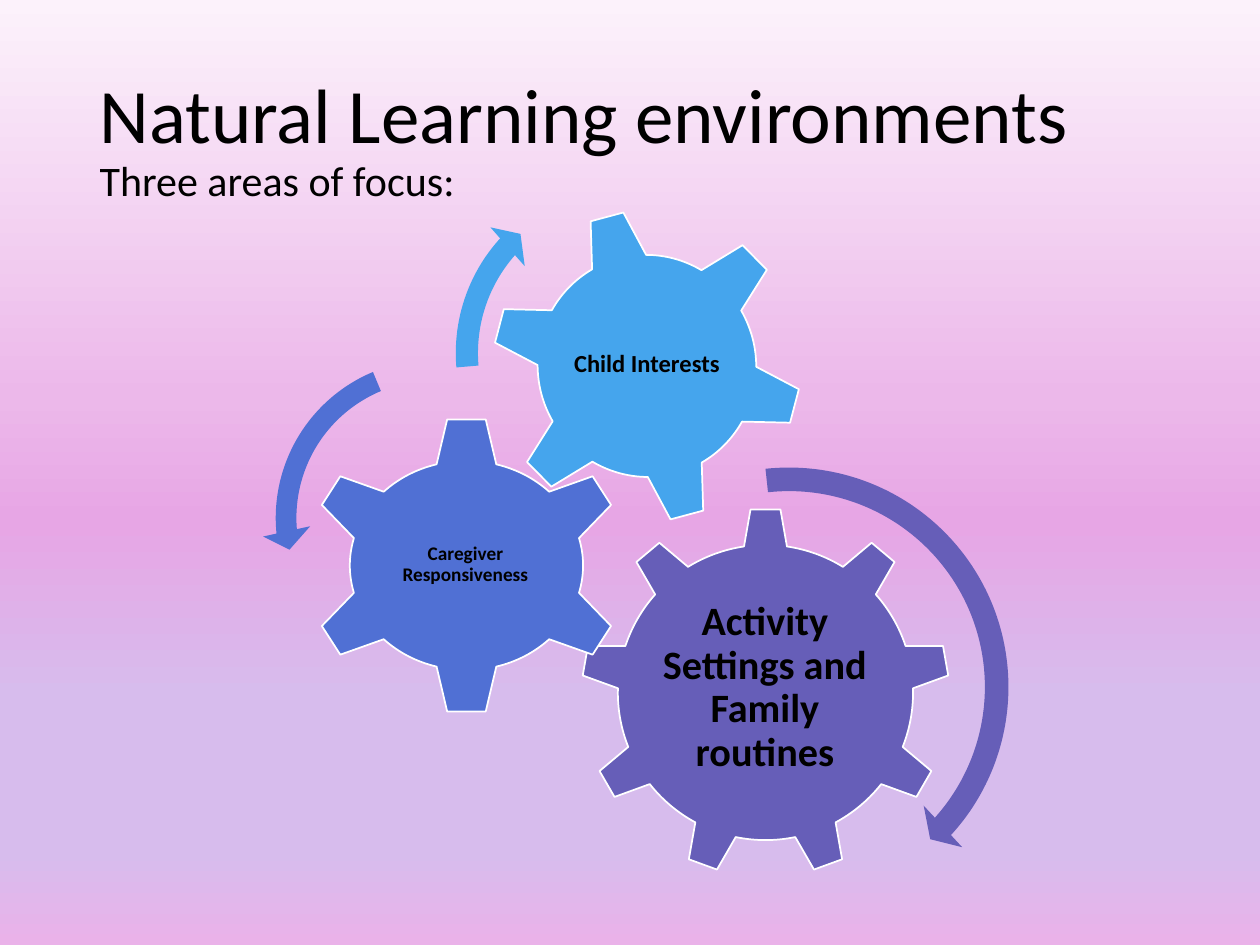
from lxml.etree import SubElement
from pptx import Presentation
from pptx.dml.color import RGBColor
from pptx.enum.shapes import MSO_SHAPE as Shape
from pptx.enum.text import MSO_ANCHOR as Anchor, MSO_AUTO_SIZE as AutoSize, PP_ALIGN as Align
from pptx.oxml.ns import qn
from pptx.util import Pt

EMU_PER_PX = 914400 / 126
FONT = "Calibri"
BLACK = RGBColor(0x00, 0x00, 0x00)
WHITE = RGBColor(0xFF, 0xFF, 0xFF)
PURPLE = RGBColor(0x66, 0x5E, 0xB8)
BLUE = RGBColor(0x50, 0x70, 0xD4)
SKY = RGBColor(0x45, 0xA5, 0xED)

# Background stops: percent from the top, colour
STOPS = [(0, "FCF2FB"), (42, "ECB8EA"), (55, "E7A6E5"),
         (74, "D7BCED"), (90, "D7BCED"), (100, "EAB2E9")]

# Gears: shape, place, rotation, colour, label, label place, inset, text size
GEARS = [
    (Shape.GEAR_9, (581, 508, 369, 369), 0, PURPLE,
     "Activity Settings and Family routines", (655, 593, 220, 190), 4, 23),
    (Shape.GEAR_6, (305, 416, 323, 299), 0, BLUE,
     "Caregiver Responsiveness", (383, 491, 165, 147), 3, 11),
    (Shape.GEAR_6, (491, 208, 312, 316), 345, SKY,
     "Child Interests", (559, 277, 176, 176), 3, 14),
]

# Arrows: shape, place, colour, adjustments
ARROWS = [
    (Shape.CIRCULAR_ARROW, (553, 451, 472, 472), PURPLE,
     (0.05, 2.99, 25.3, 158.31, 0.06)),
    (Shape.LEFT_CIRCULAR_ARROW, (262, 346, 344, 344), BLUE,
     (0.06, 4.3, 104.89, 148.38, 0.07)),
    (Shape.CIRCULAR_ARROW, (441, 168, 370, 370), SKY,
     (0.06, 3.94, 133.14, 105.08, 0.07)),
]


def px(length):
    return round(length * EMU_PER_PX)


def scaled(place):
    return [px(length) for length in place]


def style(span, size, bold=False):
    span.font.name = FONT
    span.font.size = Pt(size)
    span.font.bold = bold
    span.font.color.rgb = BLACK


def set_background(page):
    fill = page.background.fill
    fill.gradient()
    fill.gradient_angle = 270
    stops = next(page.element.iter(qn("a:gsLst")))
    for stop in list(stops):
        stops.remove(stop)
    for percent, colour in STOPS:
        stop = SubElement(stops, qn("a:gs"), pos=str(percent * 1000))
        SubElement(stop, qn("a:srgbClr"), val=colour)


def set_title(page):
    title = page.shapes.title
    title.left, title.top, title.width, title.height = scaled((87, 50, 1086, 183))
    frame = title.text_frame
    frame.text = "Natural Learning environments\vThree areas of focus:"
    frame.auto_size = AutoSize.NONE
    frame.vertical_anchor = Anchor.MIDDLE
    para = frame.paragraphs[0]
    para.alignment = Align.LEFT
    para.line_spacing = 0.9
    for span, size in zip(para.runs, (44, 24)):
        style(span, size)


def add_solid(page, kind, place, colour):
    shape = page.shapes.add_shape(kind, *scaled(place))
    shape.shadow.inherit = False
    shape.fill.solid()
    shape.fill.fore_color.rgb = colour
    return shape


def add_gear(page, kind, place, rotation, colour):
    gear = add_solid(page, kind, place, colour)
    gear.rotation = rotation
    gear.line.color.rgb = WHITE
    gear.line.width = Pt(1)


def add_label(page, text, place, inset, size):
    box = page.shapes.add_textbox(*scaled(place))
    frame = box.text_frame
    frame.text = text
    frame.word_wrap = True
    frame.vertical_anchor = Anchor.MIDDLE
    frame.margin_left = frame.margin_right = px(inset)
    frame.margin_top = frame.margin_bottom = px(inset)
    para = frame.paragraphs[0]
    para.alignment = Align.CENTER
    para.line_spacing = 0.9
    style(para.runs[0], size, bold=True)


def add_arrow(page, kind, place, colour, adjustments):
    arrow = add_solid(page, kind, place, colour)
    arrow.line.fill.background()
    for index, value in enumerate(adjustments):
        arrow.adjustments[index] = value


def main():
    deck = Presentation()
    deck.slide_width, deck.slide_height = px(1260), px(945)
    page = deck.slides.add_slide(deck.slide_layouts[5])
    set_background(page)
    set_title(page)
    for kind, place, rotation, colour, text, text_place, inset, size in GEARS:
        add_gear(page, kind, place, rotation, colour)
        add_label(page, text, text_place, inset, size)
    for arrow in ARROWS:
        add_arrow(page, *arrow)
    deck.save("out.pptx")


if __name__ == "__main__":
    main()
